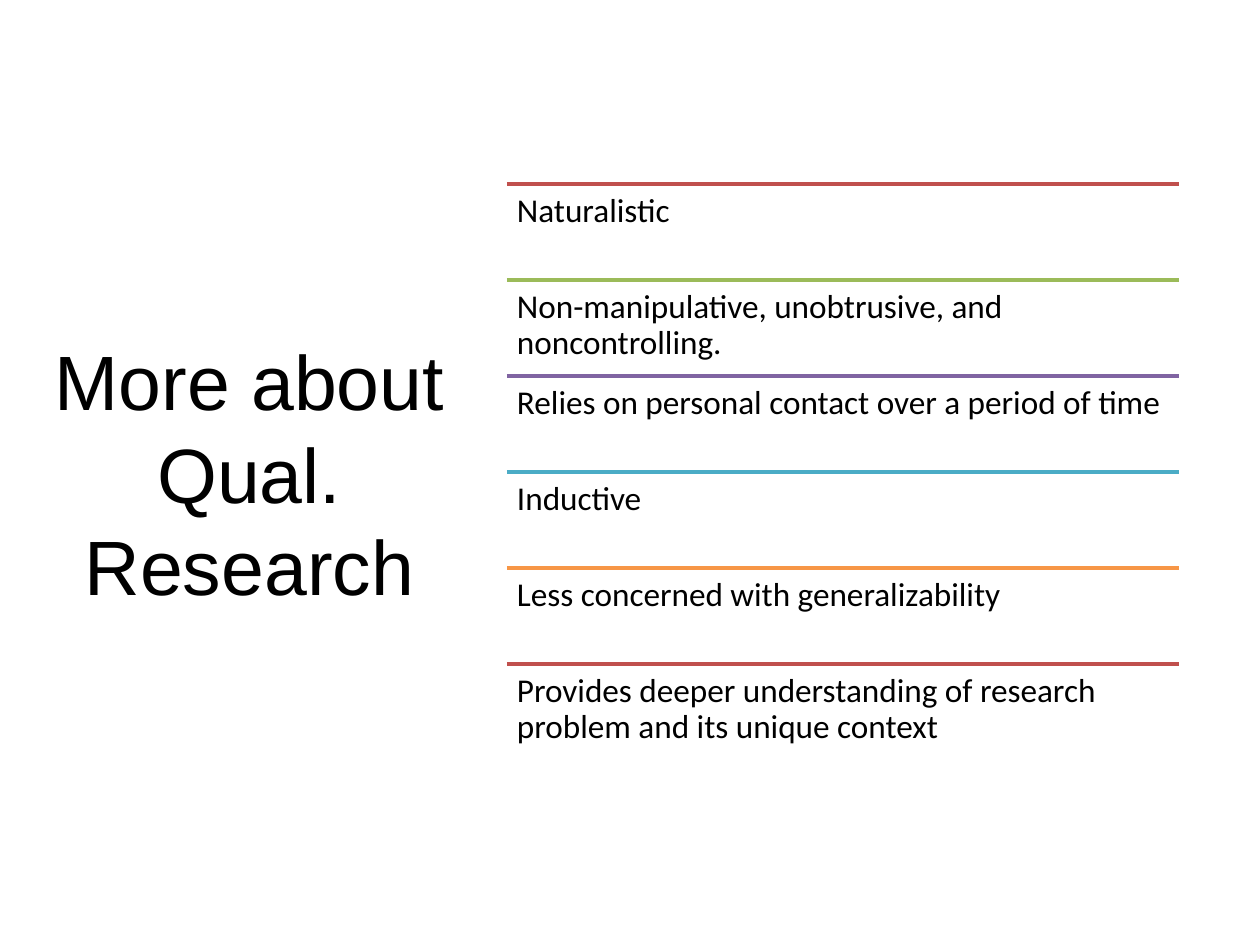
from pptx import Presentation
from pptx.dml.color import RGBColor
from pptx.enum.shapes import MSO_CONNECTOR
from pptx.enum.text import MSO_ANCHOR, PP_ALIGN
from pptx.oxml.ns import qn
from pptx.util import Emu, Pt
from lxml import etree

STRAIGHT = MSO_CONNECTOR.STRAIGHT
TOP, MIDDLE = MSO_ANCHOR.TOP, MSO_ANCHOR.MIDDLE
LEFT, CENTER = PP_ALIGN.LEFT, PP_ALIGN.CENTER

COLORS = {
    "text": "000000",
    "red": "C0504D",
    "green": "9BBB59",
    "purple": "8064A2",
    "blue": "4BACC6",
    "orange": "F79646",
}

TRAITS = [
    ("Naturalistic", "red"),
    ("Non-manipulative, unobtrusive, and noncontrolling.", "green"),
    ("Relies on personal contact over a period of time", "purple"),
    ("Inductive", "blue"),
    ("Less concerned with generalizability", "orange"),
    ("Provides deeper understanding of research problem and its unique context", "red"),
]

LIST_LEFT, LIST_TOP, LIST_WIDTH, ROW_HEIGHT = 507, 184, 672, 96


def px(length):
    return Emu(round(length * 914400 / 126))


def color(name):
    return RGBColor.from_string(COLORS[name])


def add_text(slide, text, box, *, font, size, inset, align=LEFT, anchor=TOP, spacing=1.0):
    shape = slide.shapes.add_textbox(*map(px, box))
    frame = shape.text_frame
    frame.word_wrap = True
    frame.vertical_anchor = anchor
    frame.margin_left = frame.margin_right = px(inset)
    frame.margin_top = frame.margin_bottom = px(inset)
    paragraph = frame.paragraphs[0]
    paragraph.alignment = align
    paragraph.line_spacing = spacing
    run = paragraph.add_run()
    run.text = text
    run.font.name = font
    run.font.size = Pt(size)
    run.font.color.rgb = color("text")


def add_rule(slide, left, top, width, color_name):
    connector = slide.shapes.add_connector(
        STRAIGHT, px(left), px(top), px(left + width), px(top))
    connector.line.color.rgb = color(color_name)
    connector.line.width = Pt(2)
    etree.SubElement(connector._element.spPr, qn("a:effectLst"))


def add_trait(slide, index, text, color_name):
    top = LIST_TOP + index * ROW_HEIGHT
    add_rule(slide, LIST_LEFT, top, LIST_WIDTH, color_name)
    add_text(slide, text, (LIST_LEFT, top, LIST_WIDTH, ROW_HEIGHT),
             font="Calibri", size=19, inset=10, spacing=0.9)


def main():
    presentation = Presentation()
    presentation.slide_width = px(1260)
    presentation.slide_height = px(945)
    slide = presentation.slides.add_slide(presentation.slide_layouts[6])
    add_text(slide, "More about Qual. Research", (28, 184, 443, 577),
             font="Arial", size=44, inset=6, align=CENTER, anchor=MIDDLE)
    for index, (text, color_name) in enumerate(TRAITS):
        add_trait(slide, index, text, color_name)
    presentation.save("out.pptx")


if __name__ == "__main__":
    main()
